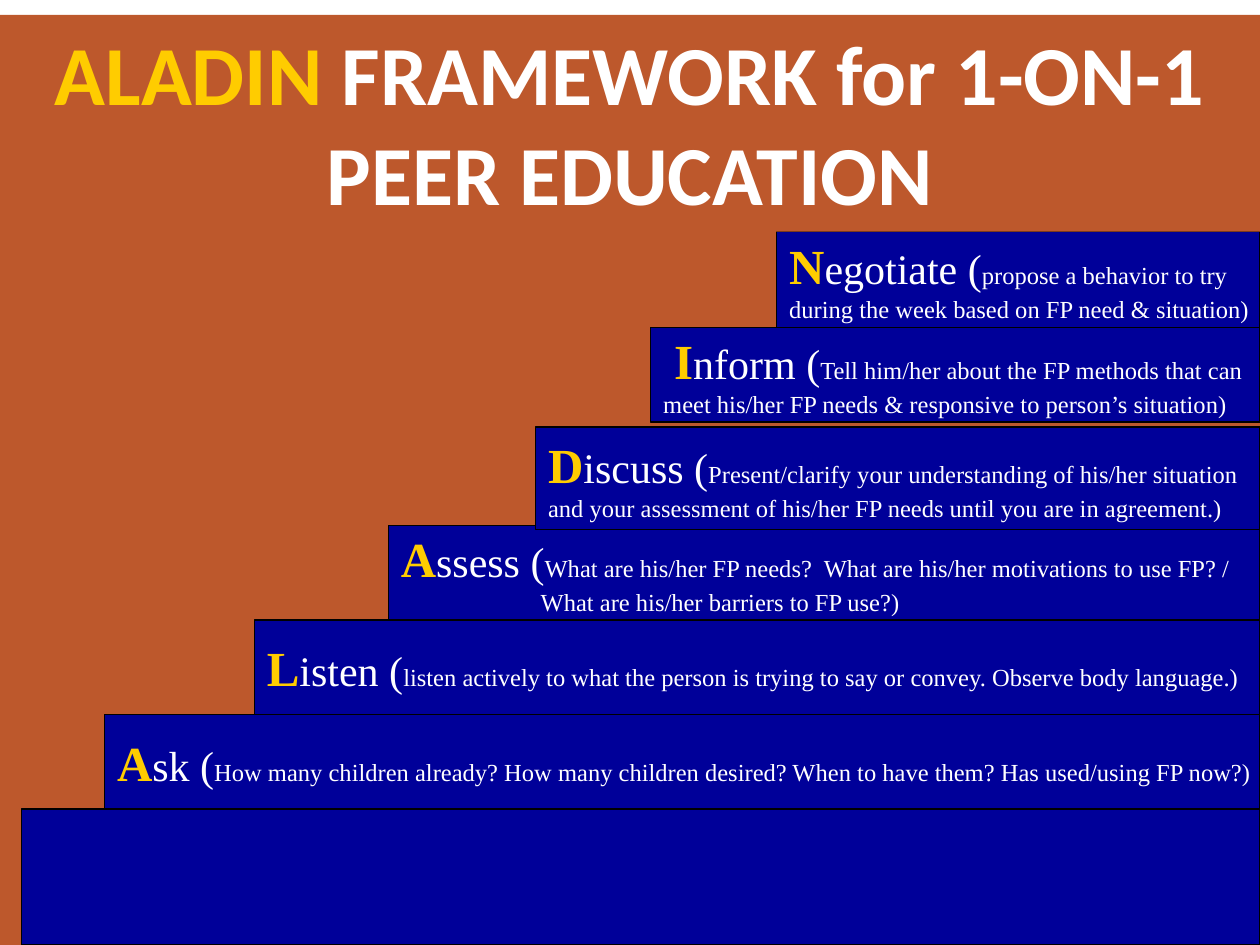
from pptx import Presentation
from pptx.dml.color import RGBColor
from pptx.enum.shapes import MSO_SHAPE
from pptx.enum.text import MSO_ANCHOR, PP_ALIGN
from pptx.util import Cm, Pt

RUST, NAVY, GOLD, WHITE, BLACK = "BD582C", "000099", "FFCC00", "FFFFFF", "000000"
SERIF = "Times New Roman"
SLIDE_WIDTH, SLIDE_HEIGHT = 25.4, 19.05

STEPS = [
    (2.11, 14.4, 1.91, False, "A", "sk (",
     ["How many children already? How many children desired? "
      "When to have them? Has used/using FP now?)"], 0, 0),
    (5.13, 12.5, 1.91, False, "L", "isten (",
     ["listen actively to what the person is trying to say or convey. "
      "Observe body language.)"], 0, 0),
    (7.83, 10.59, 1.91, False, "A", "ssess (",
     ["What are his/her FP needs?  What are his/her motivations to use FP? /",
      "What are his/her barriers to FP use?)"], 0, 2.82),
    (10.8, 8.61, 2.06, True, "D", "iscuss (",
     ["Present/clarify your understanding of his/her situation and your "
      "assessment of his/her FP needs until you are in agreement.)"], 0, 0),
    (13.12, 6.6, 1.91, False, "I", "nform (",
     ["Tell him/her about the FP methods that can",
      "meet his/her FP needs & responsive to person’s situation)"], 0.22, 0),
    (15.66, 4.66, 1.95, False, "N", "egotiate (",
     ["propose a behavior to try",
      "during the week based on FP need & situation)"], 0, 0),
]


def color(value):
    return RGBColor.from_string(value)


def add_block(slide, left, top, width, height, fill, line=None):
    shape = slide.shapes.add_shape(
        MSO_SHAPE.RECTANGLE, Cm(left), Cm(top), Cm(width), Cm(height))
    shape.shadow.inherit = False
    shape.fill.solid()
    shape.fill.fore_color.rgb = color(fill)
    if line:
        shape.line.color.rgb = color(line)
        shape.line.width = Pt(0.75)
    else:
        shape.line.fill.background()
    return shape


def add_text(paragraph, text, size=14, font=SERIF, fill=WHITE, bold=False):
    run = paragraph.add_run()
    run.text = text
    run.font.size = Pt(size)
    run.font.name = font
    run.font.bold = bold
    run.font.color.rgb = color(fill)


def indent(paragraph, distance):
    if distance:
        paragraph._p.get_or_add_pPr().set("marL", str(Cm(distance)))


def add_step(slide, left, top, height, wrap, initial, rest, lines, *indents):
    shape = add_block(slide, left, top, SLIDE_WIDTH - left, height, NAVY, BLACK)
    frame = shape.text_frame
    frame.word_wrap = wrap
    frame.vertical_anchor = MSO_ANCHOR.MIDDLE
    for index, (line, distance) in enumerate(zip(lines, indents)):
        paragraph = frame.add_paragraph() if index else frame.paragraphs[0]
        paragraph.alignment = PP_ALIGN.LEFT
        indent(paragraph, distance)
        if index == 0:
            add_text(paragraph, initial, size=28, fill=GOLD, bold=True)
            add_text(paragraph, rest, size=24)
        add_text(paragraph, line)


def add_title(slide):
    shape = add_block(slide, 0, 0.3, SLIDE_WIDTH, 4.37, RUST)
    frame = shape.text_frame
    frame.word_wrap = True
    frame.vertical_anchor = MSO_ANCHOR.TOP
    paragraph = frame.paragraphs[0]
    paragraph.alignment = PP_ALIGN.CENTER
    add_text(paragraph, "ALADIN", size=48, font="Calibri", fill=GOLD, bold=True)
    add_text(paragraph, " FRAMEWORK for 1-ON-1 PEER EDUCATION",
             size=48, font="Calibri", bold=True)


def main():
    presentation = Presentation()
    presentation.slide_width = Cm(SLIDE_WIDTH)
    presentation.slide_height = Cm(SLIDE_HEIGHT)
    slide = presentation.slides.add_slide(presentation.slide_layouts[6])
    add_block(slide, 0, 17.78, SLIDE_WIDTH, 1.27, RUST)
    add_block(slide, 0, 1.96, SLIDE_WIDTH, 16.26, RUST)
    for step in STEPS:
        add_step(slide, *step)
    add_title(slide)
    add_block(slide, 0.43, 16.31, 24.97, 2.74, NAVY, BLACK)
    presentation.save("out.pptx")


if __name__ == "__main__":
    main()
